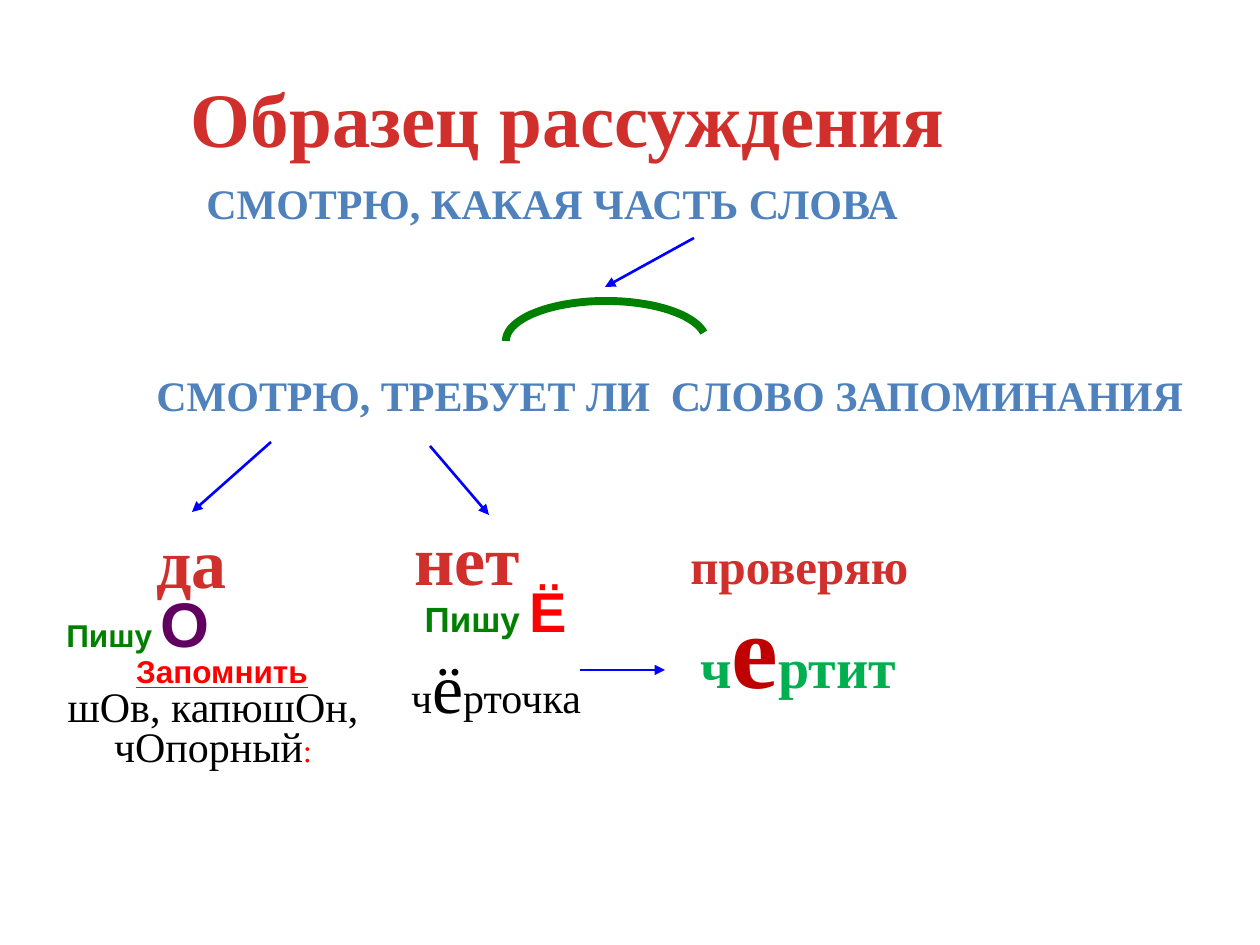
import math

import pptx
import pptx.dml.color
import pptx.enum.shapes
import pptx.enum.text
import pptx.oxml
import pptx.oxml.ns
import pptx.util

EMU_PER_PX = 914400 / 126
RED = pptx.dml.color.RGBColor(0xD0, 0x2F, 0x2C)
BRIGHT_RED = pptx.dml.color.RGBColor(0xFF, 0x00, 0x00)
DARK_RED = pptx.dml.color.RGBColor(0xC0, 0x00, 0x00)
STEEL_BLUE = pptx.dml.color.RGBColor(0x4F, 0x81, 0xBD)
ARROW_BLUE = pptx.dml.color.RGBColor(0x00, 0x00, 0xFF)
GREEN = pptx.dml.color.RGBColor(0x00, 0x80, 0x00)
LIGHT_GREEN = pptx.dml.color.RGBColor(0x00, 0xB0, 0x50)
PURPLE = pptx.dml.color.RGBColor(0x61, 0x00, 0x61)
BLACK = pptx.dml.color.RGBColor(0x00, 0x00, 0x00)
SERIF = "Times New Roman"
SANS = "Arial"
LEFT = pptx.enum.text.PP_ALIGN.LEFT
CENTER = pptx.enum.text.PP_ALIGN.CENTER


def px(length):
    return pptx.util.Emu(round(length * EMU_PER_PX))


def add_run(paragraph, text, size, color, font=SERIF, bold=True, underline=None):
    run = paragraph.add_run()
    run.text = text
    run.font.size = pptx.util.Pt(size)
    run.font.name = font
    run.font.bold = bold
    run.font.underline = underline
    run.font.color.rgb = color


def add_title(slide, text):
    title = slide.shapes.title
    title.left, title.top, title.width, title.height = map(px, (63, 38, 1134, 157))
    frame = title.text_frame
    frame.auto_size = pptx.enum.text.MSO_AUTO_SIZE.NONE
    frame.vertical_anchor = pptx.enum.text.MSO_ANCHOR.MIDDLE
    frame.margin_left = px(128)
    frame.paragraphs[0].alignment = LEFT
    add_run(frame.paragraphs[0], text, 44, RED)


def add_text(slide, box, lines, align=LEFT):
    frame = slide.shapes.add_textbox(*map(px, box)).text_frame
    frame.word_wrap = True
    frame.auto_size = pptx.enum.text.MSO_AUTO_SIZE.SHAPE_TO_FIT_TEXT
    for index, runs in enumerate(lines):
        paragraph = frame.paragraphs[0] if index == 0 else frame.add_paragraph()
        paragraph.alignment = align
        for run in runs:
            add_run(paragraph, *run)
    return frame


def add_arrow(slide, start, end):
    arrow = slide.shapes.add_connector(
        pptx.enum.shapes.MSO_CONNECTOR.STRAIGHT, *map(px, start + end))
    arrow.line.color.rgb = ARROW_BLUE
    arrow.line.width = pptx.util.Pt(1.5)
    head = pptx.oxml.parse_xml(
        f'<a:tailEnd {pptx.oxml.ns.nsdecls("a")} type="triangle"/>')
    arrow.line._get_or_add_ln().append(head)
    arrow._element.spPr.append(
        pptx.oxml.parse_xml(f'<a:effectLst {pptx.oxml.ns.nsdecls("a")}/>'))


def add_root_arc(slide, center, radii, first_degree, last_degree):
    steps = 56
    angles = [math.radians(first_degree + (last_degree - first_degree) * i / steps)
              for i in range(steps + 1)]
    points = [(px(center[0] + radii[0] * math.cos(angle)),
               px(center[1] + radii[1] * math.sin(angle))) for angle in angles]
    builder = slide.shapes.build_freeform(*points[0])
    builder.add_line_segments(points[1:], close=False)
    arc = builder.convert_to_shape()
    arc.shadow.inherit = False
    arc.fill.background()
    arc.line.color.rgb = GREEN
    arc.line.width = pptx.util.Pt(4.5)


def add_memorised_words(slide):
    frame = add_text(slide, (54, 591, 318, 188), [
        [("Пишу ", 18, GREEN, SANS), ("О", 36, PURPLE, SANS)],
        [("Запомнить", 18, BRIGHT_RED, SANS, True, True)],
        [("шОв, капюшОн, чОпорный", 24, BLACK, SERIF, False),
         (":", 18, BRIGHT_RED, SERIF, False)],
    ], CENTER)
    frame.vertical_anchor = pptx.enum.text.MSO_ANCHOR.MIDDLE
    for paragraph in frame.paragraphs:
        paragraph.line_spacing = 0.8
    rule, remember = frame.paragraphs[:2]
    rule.alignment = LEFT
    remember._p.get_or_add_pPr().set("marL", str(px(18)))


def main():
    deck = pptx.Presentation()
    deck.slide_width, deck.slide_height = px(1260), px(945)
    slide = deck.slides.add_slide(deck.slide_layouts[5])

    add_title(slide, "Образец рассуждения")
    add_text(slide, (194, 171, 794, 63),
             [[("СМОТРЮ, КАКАЯ ЧАСТЬ СЛОВА", 24, STEEL_BLUE)]])
    add_arrow(slide, (694, 238), (605, 287))
    add_root_arc(slide, (606, 341), (100, 40), 180, 348)
    add_text(slide, (144, 363, 1116, 63),
             [[("СМОТРЮ, ТРЕБУЕТ ЛИ  СЛОВО ЗАПОМИНАНИЯ", 24, STEEL_BLUE)]])
    add_arrow(slide, (271, 442), (192, 512))
    add_arrow(slide, (430, 446), (489, 515))

    add_text(slide, (144, 512, 100, 97), [[("да", 40, RED)]])
    add_text(slide, (402, 509, 141, 97), [[("нет", 40, RED)]])
    add_memorised_words(slide)
    add_text(slide, (363, 570, 266, 165), [
        [("Пишу ", 20, GREEN, SANS), ("Ё", 32, BRIGHT_RED, SANS)],
        [("ч", 24, BLACK, SERIF, False), ("ё", 40, BLACK, SERIF, False),
         ("рточка", 24, BLACK, SERIF, False)],
    ], CENTER)
    add_arrow(slide, (580, 670), (665, 670))
    add_text(slide, (678, 529, 253, 72), [[("проверяю", 28, RED)]])
    add_text(slide, (688, 577, 253, 140), [
        [("ч", 32, LIGHT_GREEN), ("е", 60, DARK_RED), ("ртит", 32, LIGHT_GREEN)]])

    deck.save("out.pptx")


if __name__ == "__main__":
    main()
